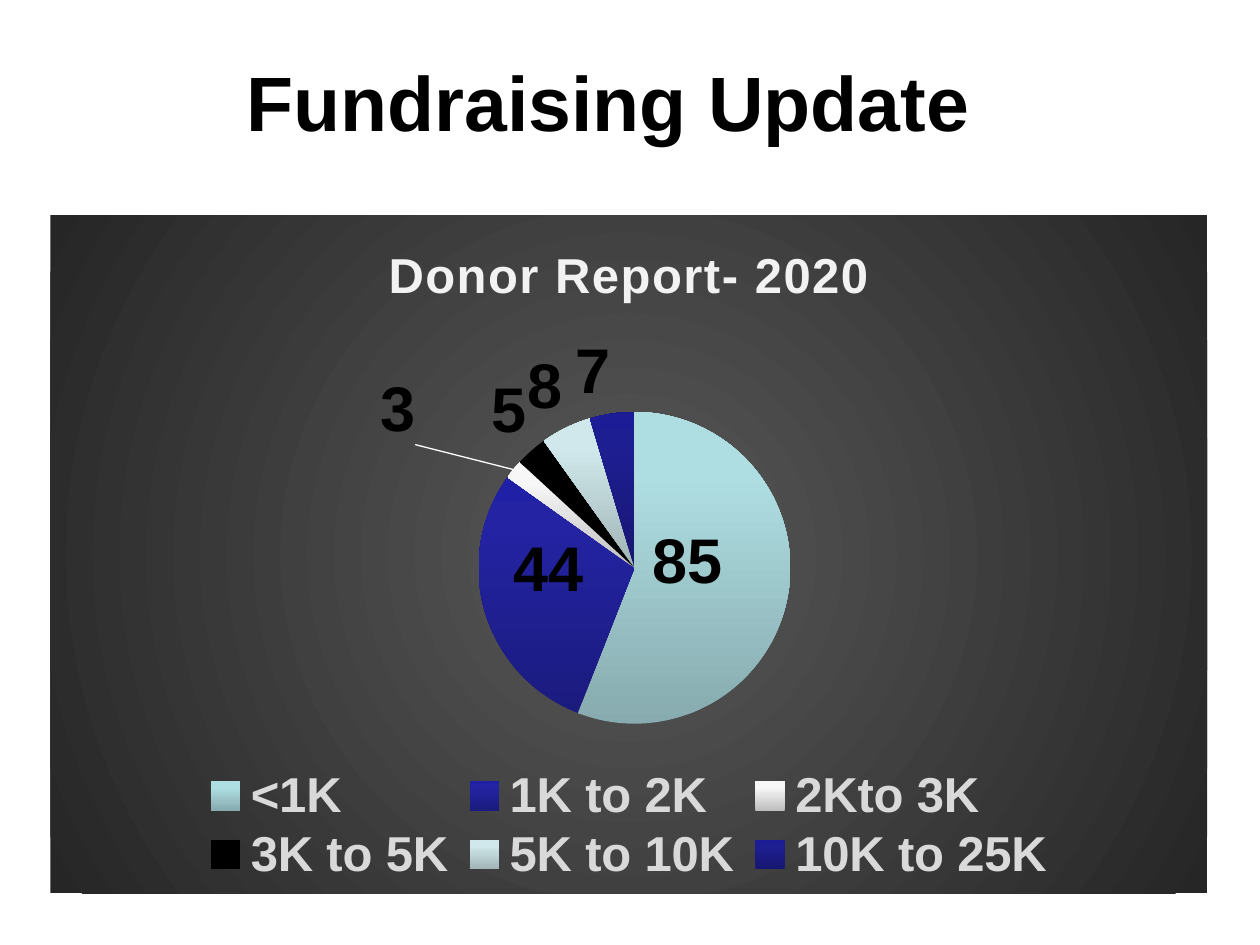
from lxml import etree
from pptx import Presentation
from pptx.chart.data import CategoryChartData
from pptx.dml.color import RGBColor
from pptx.enum.chart import XL_CHART_TYPE, XL_LABEL_POSITION, XL_LEGEND_POSITION
from pptx.enum.text import MSO_ANCHOR, PP_ALIGN
from pptx.oxml import parse_xml
from pptx.oxml.ns import nsdecls, qn
from pptx.util import Inches, Pt

PIE = XL_CHART_TYPE.PIE
BOTTOM = XL_LEGEND_POSITION.BOTTOM
INSIDE = XL_LABEL_POSITION.CENTER
OUTSIDE = XL_LABEL_POSITION.OUTSIDE_END
MIDDLE = MSO_ANCHOR.MIDDLE
CENTER = PP_ALIGN.CENTER

TITLE = "Fundraising Update"
CHART_TITLE = "Donor Report- 2020"
SERIES = "Series 1"
DONORS = [
    ("<1K", 85, ("87ABAE", "AFDEE2", "AFE0E4"), INSIDE, (-0.02, -0.03)),
    ("1K to 2K", 44, ("1B1B7E", "2323A3", "2020A6"), INSIDE, (-0.01, -0.03)),
    ("2Kto 3K", 3, ("BEBEBE", "F7F7F7", "F8F8F8"), OUTSIDE, (-0.08, -0.03)),
    ("3K to 5K", 5, ("000000", "000000", "000000"), OUTSIDE, None),
    ("5K to 10K", 8, ("A0B3B5", "D0E8EB", "D1EAEC"), OUTSIDE, None),
    ("10K to 25K", 7, ("171771", "1E1E93", "1C1C96"), OUTSIDE, None),
]
THEME = {
    "font": "Arial",
    "text": "000000",
    "chart_title": "F2F2F2",
    "legend": "D9D9D9",
    "leader": "FFFFFF",
    "panel": ("595959", "262626"),
    "title_size": 44,
    "chart_size": 28,
    "label_size": 36,
}
STOPS = (0, 80, 100)
LINEAR = '<a:lin ang="16200000" scaled="0"/>'
CIRCLE = '<a:path path="circle"><a:fillToRect l="50000" t="50000" r="50000" b="50000"/></a:path>'


def style(font, size, color):
    font.name = THEME["font"]
    font.size = Pt(size)
    font.bold = True
    font.color.rgb = RGBColor.from_string(color)


def gradient(colors, stops, direction):
    marks = "".join(
        f'<a:gs pos="{stop * 1000}"><a:srgbClr val="{color}"/></a:gs>'
        for stop, color in zip(stops, colors)
    )
    return parse_xml(
        f'<a:gradFill {nsdecls("a")} rotWithShape="1"><a:gsLst>{marks}</a:gsLst>{direction}</a:gradFill>'
    )


def no_line():
    return parse_xml(f'<a:ln {nsdecls("a")}><a:noFill/></a:ln>')


def layout(x, y, w=None, h=None, inner=False):
    root = etree.Element(qn("c:layout"))
    manual = etree.SubElement(root, qn("c:manualLayout"))
    settings = [("layoutTarget", "inner")] if inner else []
    if w:
        settings += [("xMode", "edge"), ("yMode", "edge")]
    settings += [("x", x), ("y", y)]
    if w:
        settings += [("w", w), ("h", h)]
    for tag, value in settings:
        etree.SubElement(manual, qn(f"c:{tag}")).set("val", str(value))
    return root


def set_layout(parent, new, after=None):
    for old in parent.findall(qn("c:layout")):
        parent.remove(old)
    if after is None:
        parent.insert(0, new)
    else:
        parent.find(qn(after)).addnext(new)


def add_title(slide):
    tf = slide.shapes.add_textbox(Inches(1.33), Inches(0.17), Inches(7), Inches(1.25)).text_frame
    tf.word_wrap = True
    tf.vertical_anchor = MIDDLE
    p = tf.paragraphs[0]
    p.alignment = CENTER
    r = p.add_run()
    r.text = TITLE
    style(r.font, THEME["title_size"], THEME["text"])


def add_slices(series):
    labels = series.data_labels
    labels.show_value = True
    labels.position = OUTSIDE
    style(labels.font, THEME["label_size"], THEME["text"])
    for i, (_, _, colors, position, shift) in enumerate(DONORS):
        sp_pr = series._element.get_or_add_dPt_for_point(i).get_or_add_spPr()
        sp_pr.append(gradient(colors, STOPS, LINEAR))
        sp_pr.append(no_line())
        if shift:
            label = series.points[i].data_label
            style(label.font, THEME["label_size"], THEME["text"])
            label.position = position
            d_lbl = series._element.find(qn("c:dLbls")).findall(qn("c:dLbl"))[-1]
            set_layout(d_lbl, layout(*shift), "c:idx")
    d_lbls = series._element.find(qn("c:dLbls"))
    leader = d_lbls.find(qn("c:showLeaderLines"))
    if leader is None:
        leader = etree.SubElement(d_lbls, qn("c:showLeaderLines"))
    leader.set("val", "1")
    leader.addnext(parse_xml(
        f'<c:leaderLines {nsdecls("c", "a")}><c:spPr><a:ln w="9525"><a:solidFill>'
        f'<a:srgbClr val="{THEME["leader"]}"/></a:solidFill></a:ln></c:spPr></c:leaderLines>'
    ))


def add_donor_chart(slide):
    data = CategoryChartData()
    data.categories = [donor[0] for donor in DONORS]
    data.add_series(SERIES, [donor[1] for donor in DONORS])
    chart = slide.shapes.add_chart(
        PIE, Inches(0.4), Inches(1.71), Inches(9.18), Inches(5.38), data
    ).chart
    chart.font.name = THEME["font"]
    chart.font.size = Pt(10)

    chart.has_title = True
    r = chart.chart_title.text_frame.paragraphs[0].add_run()
    r.text = CHART_TITLE
    style(r.font, THEME["chart_size"], THEME["chart_title"])
    r._r.get_or_add_rPr().set("spc", "100")

    chart.has_legend = True
    chart.legend.position = BOTTOM
    chart.legend.include_in_layout = False
    style(chart.legend.font, THEME["chart_size"], THEME["legend"])
    set_layout(chart.legend._element, layout(0.12, 0.81, 0.76, 0.18), "c:legendPos")

    plot = chart.plots[0]
    plot.vary_by_categories = True
    add_slices(plot.series[0])

    space = chart._chartSpace
    body = space.find(qn("c:chart"))
    set_layout(body.find(qn("c:plotArea")), layout(0.37, 0.29, 0.27, 0.46, True))
    panel = etree.Element(qn("c:spPr"))
    panel.append(gradient(THEME["panel"], (0, 100), CIRCLE))
    panel.append(no_line())
    body.addnext(panel)


def main():
    prs = Presentation()
    prs.slide_width = Inches(10)
    prs.slide_height = Inches(7.5)
    s = prs.slides.add_slide(prs.slide_layouts[6])
    add_donor_chart(s)
    add_title(s)
    prs.save("out.pptx")


if __name__ == "__main__":
    main()
